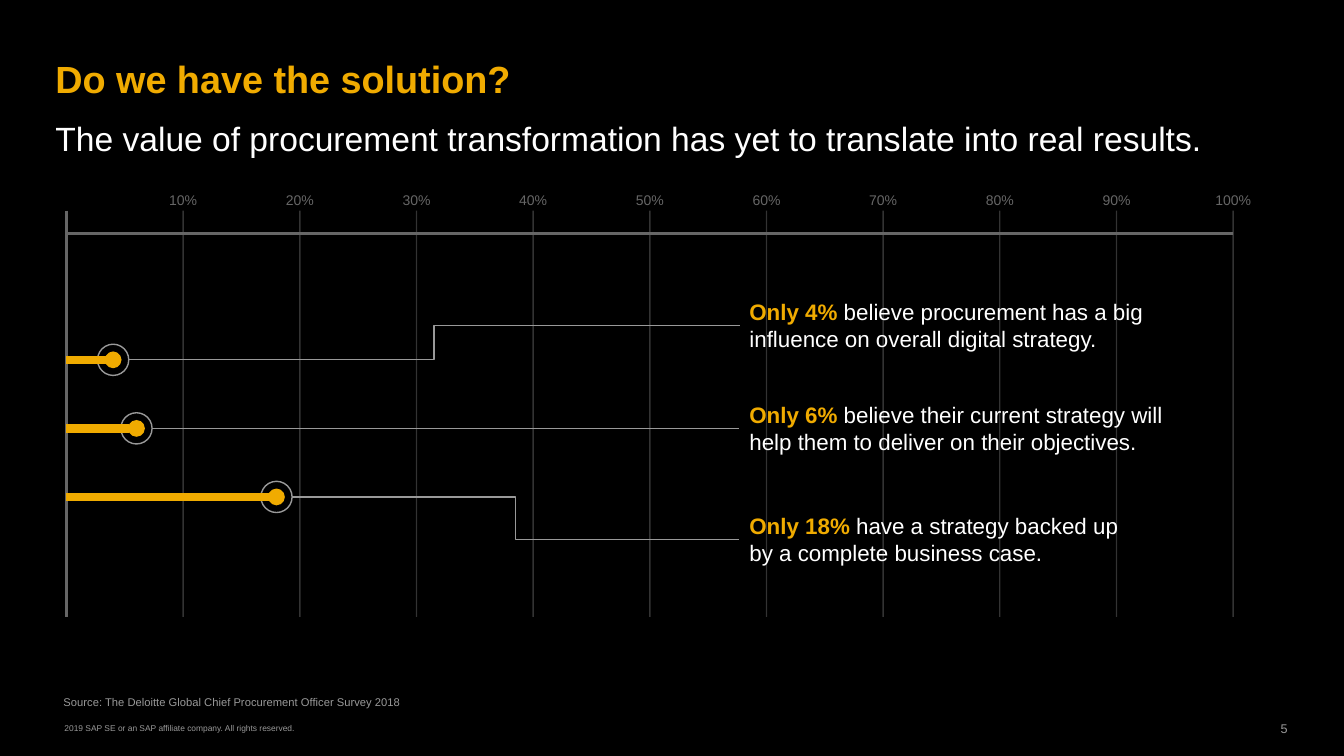
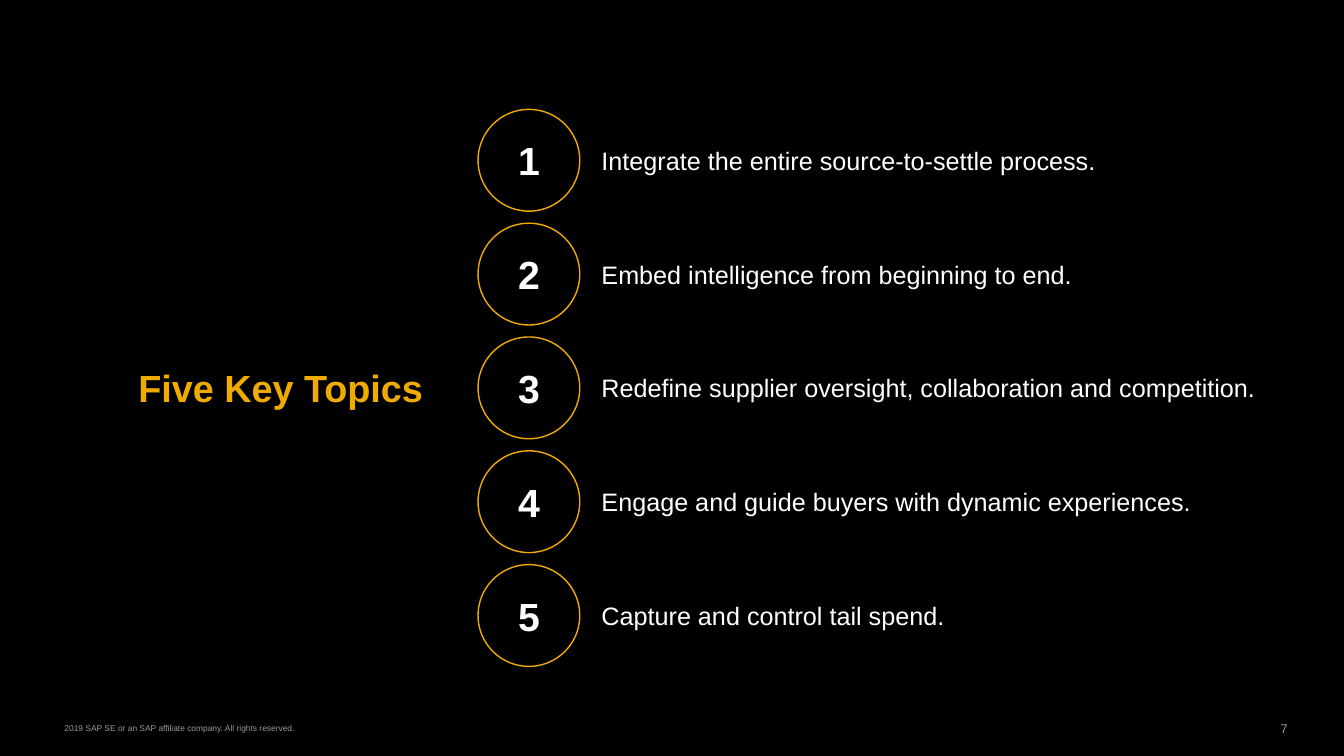
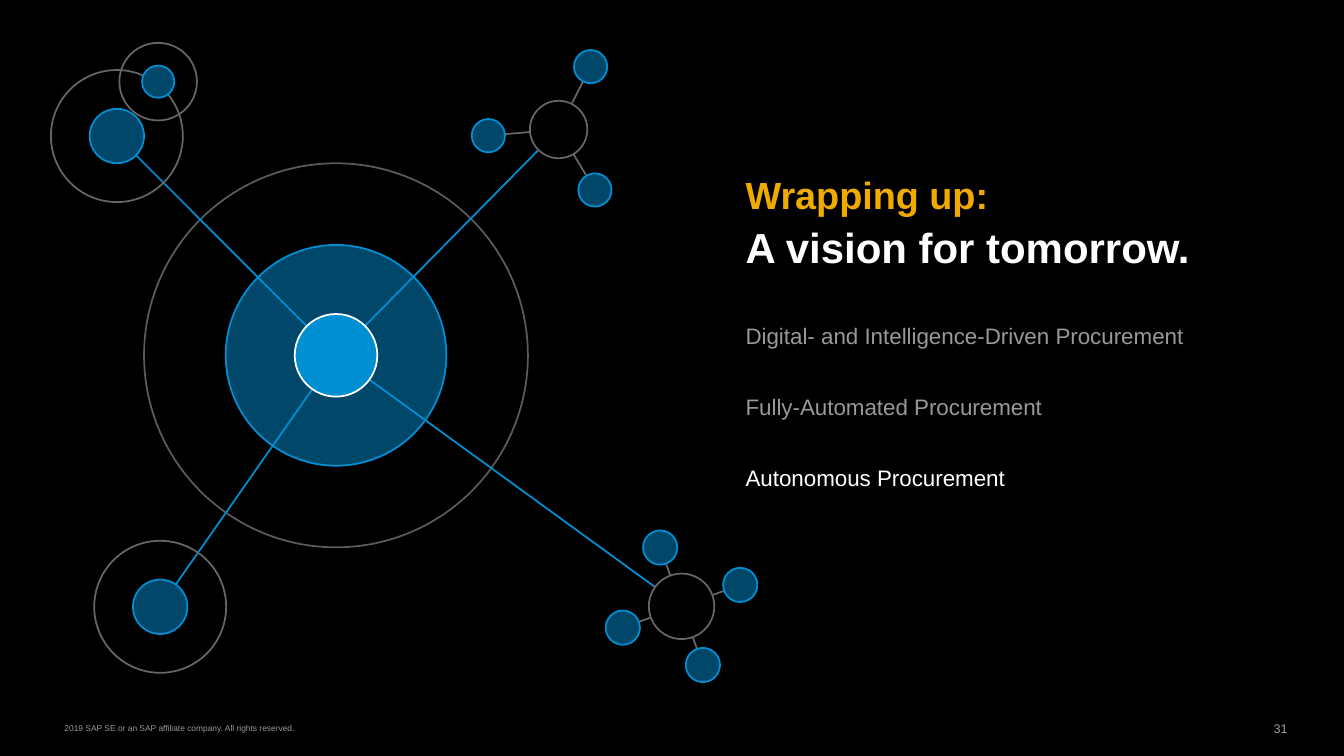
from dataclasses import dataclass
from math import cos, radians, sin

from lxml import etree
from pptx import Presentation
from pptx import util as u
from pptx.dml.color import RGBColor
from pptx.enum import shapes, text
from pptx.oxml import ns

# Lengths are counted in square grid cells, 75 rows to the slide height
COLUMNS, ROWS = 133.4, 75
CELL = u.Inches(0.1)
FONT = "Arial"
COLOURS = {
    "black": "000000",
    "white": "FFFFFF",
    "gold": "F0AB00",
    "light": "D9D9D9",
    "grey": "999999",
    "dark": "666666",
    "blue": "008FD3",
    "navy": "00476A",
}
LEFT, RIGHT = 5.5, 127.8
LEFT_ALIGN = text.PP_ALIGN.LEFT
CENTRE_ALIGN = text.PP_ALIGN.CENTER
RIGHT_ALIGN = text.PP_ALIGN.RIGHT
COPYRIGHT = "2019 SAP SE or an SAP affiliate company. All rights reserved."


@dataclass(frozen=True)
class Run:
    words: str
    size: float
    colour: str = "white"
    bold: bool = False


@dataclass(frozen=True)
class Point:
    x: float
    y: float


@dataclass(frozen=True)
class Finding:
    percent: int
    claim: str
    text_top: float
    text_width: float


@dataclass(frozen=True)
class Satellite:
    centre: Point
    dot: float
    ring: float


@dataclass(frozen=True)
class Molecule:
    centre: Point
    core: float
    atom: float
    reach: float
    angles: tuple[int, ...]


def grid(cells: float) -> u.Emu:
    return u.Emu(round(cells * CELL))


def rgb(name: str) -> RGBColor:
    return RGBColor.from_string(COLOURS[name])


# Drawing helpers
def write(paragraph, runs: list[Run], align=LEFT_ALIGN) -> None:
    paragraph.alignment = align
    for part in runs:
        run = paragraph.add_run()
        run.text = part.words
        run.font.name = FONT
        run.font.size = u.Pt(part.size)
        run.font.bold = part.bold
        run.font.color.rgb = rgb(part.colour)


def add_text(slide, left: float, top: float, width: float, height: float,
             runs: list[Run], align=LEFT_ALIGN, inset: float = 0):
    box = slide.shapes.add_textbox(grid(left), grid(top), grid(width), grid(height))
    frame = box.text_frame
    frame.word_wrap = True
    frame.margin_left = grid(inset)
    frame.margin_right = frame.margin_top = frame.margin_bottom = 0
    write(frame.paragraphs[0], runs, align)
    return box


def style_line(line, colour: str, points: float, opacity: int = 100) -> None:
    line.color.rgb = rgb(colour)
    line.width = u.Pt(points)
    if opacity < 100:
        colour_element = line.fill._xPr.find(".//" + ns.qn("a:srgbClr"))
        etree.SubElement(colour_element, ns.qn("a:alpha"), val=str(opacity * 1000))


def add_line(slide, start: Point, end: Point, colour: str, points: float,
             opacity: int = 100, dot_end: bool = False,
             kind=shapes.MSO_CONNECTOR.STRAIGHT):
    connector = slide.shapes.add_connector(
        kind, grid(start.x), grid(start.y), grid(end.x), grid(end.y))
    style_line(connector.line, colour, points, opacity)
    properties = connector._element.spPr
    if dot_end:
        outline = properties.find(ns.qn("a:ln"))
        etree.SubElement(outline, ns.qn("a:tailEnd"), type="oval", w="sm", len="sm")
    etree.SubElement(properties, ns.qn("a:effectLst"))
    return connector


def add_circle(slide, centre: Point, diameter: float, line: str,
               fill: str | None = None, points: float = 1.25, opacity: int = 100):
    shape = slide.shapes.add_shape(
        shapes.MSO_SHAPE.OVAL, grid(centre.x - diameter / 2),
        grid(centre.y - diameter / 2), grid(diameter), grid(diameter))
    shape.shadow.inherit = False
    if fill:
        shape.fill.solid()
        shape.fill.fore_color.rgb = rgb(fill)
    else:
        shape.fill.background()
    style_line(shape.line, line, points, opacity)
    return shape


def add_title(slide, words: str, left: float, top: float, width: float,
              align=LEFT_ALIGN) -> None:
    add_text(slide, left, top, width, 4.5, [Run(words, 27, "gold", True)], align)


def new_slide(presentation, number: int):
    slide = presentation.slides.add_slide(presentation.slide_layouts[6])
    add_text(slide, RIGHT - 1.5, 71.5, 1.5, 1.5, [Run(str(number), 9, "grey")], RIGHT_ALIGN)
    add_text(slide, LEFT, 71.7, 24.8, 1, [Run(COPYRIGHT, 6, "grey")], inset=0.9)
    return slide


# Survey results on a percentage scale
def build_survey(presentation) -> None:
    findings = [
        Finding(4, "believe procurement has a big influence on overall digital strategy.",
                29.6, 42.5),
        Finding(6, "believe their current strategy will help them to deliver on "
                   "their objectives.", 39.8, 44.4),
        Finding(18, "have a strategy backed up by a complete business case.", 50.8, 38.2),
    ]
    axis_x, axis_width = 6.6, 115.8
    axis_top, axis_bottom, rule_y = 20.9, 61.2, 23.2
    first_bar, bar_pitch, ring = 35.7, 6.8, 3.1
    text_left, text_height = 73.4, 5.4

    def scale(percent: float) -> float:
        return axis_x + axis_width * percent / 100

    slide = new_slide(presentation, 5)
    for percent in range(10, 101, 10):
        x = scale(percent)
        add_line(slide, Point(x, axis_top), Point(x, axis_bottom), "dark", 1, 50)
        add_text(slide, x - 2.2, 19, 4.4, 1.7, [Run(f"{percent}%", 10, "dark")], CENTRE_ALIGN)
    add_line(slide, Point(axis_x, axis_top), Point(axis_x, axis_bottom), "dark", 2)
    add_line(slide, Point(axis_x, rule_y), Point(scale(100), rule_y), "dark", 2)

    add_title(slide, "Do we have the solution?", LEFT, 5.5, RIGHT - LEFT)
    add_text(slide, LEFT, 11.7, 114.9, 4, [Run(
        "The value of procurement transformation has yet to translate into real results.", 24)])

    for row, finding in enumerate(findings):
        label = add_text(
            slide, text_left, finding.text_top, finding.text_width, text_height,
            [Run(f"Only {finding.percent}% ", 16, "gold", True), Run(finding.claim, 16)],
            inset=1)
        value = Point(scale(finding.percent), first_bar + row * bar_pitch)
        label_middle = Point(text_left, finding.text_top + text_height / 2)
        level = abs(label_middle.y - value.y) < 0.1
        kind = shapes.MSO_CONNECTOR.STRAIGHT if level else shapes.MSO_CONNECTOR.ELBOW
        add_circle(slide, value, ring, "grey", points=1)
        add_line(slide, Point(axis_x, value.y), value, "gold", 6, dot_end=True)
        leader = add_line(slide, Point(value.x + ring / 2, value.y), label_middle,
                          "grey", 1, kind=kind)
        leader.end_connect(label, 1)

    add_text(slide, 6.3, 69, 33.9, 1.3, [Run(
        "Source: The Deloitte Global Chief Procurement Officer Survey 2018", 8, "grey")])


# Numbered list of topics
def build_topics(presentation) -> None:
    topics = [
        "Integrate the entire source-to-settle process.",
        "Embed intelligence from beginning to end.",
        "Redefine supplier oversight, collaboration and competition.",
        "Engage and guide buyers with dynamic experiences.",
        "Capture and control tail spend.",
    ]
    slide = new_slide(presentation, 7)
    add_title(slide, "Five Key Topics", LEFT, 36.2, 36.5, RIGHT_ALIGN)
    for row, topic in enumerate(topics):
        middle = 15.9 + row * 11.29
        add_text(slide, 59.7, middle - 1.5, 72.5, 3, [Run(topic, 18)])
        badge = add_circle(slide, Point(52.5, middle), 10.1, "gold", "black", 1)
        badge.text_frame.vertical_anchor = text.MSO_ANCHOR.MIDDLE
        write(badge.text_frame.paragraphs[0],
              [Run(str(row + 1), 28, bold=True)], CENTRE_ALIGN)


# Closing network diagram
def add_molecule(slide, molecule: Molecule) -> None:
    centre = molecule.centre
    atoms = [Point(centre.x + molecule.reach * cos(radians(angle)),
                   centre.y + molecule.reach * sin(radians(angle)))
             for angle in molecule.angles]
    for atom in atoms:
        add_line(slide, centre, atom, "dark", 1.25)
    add_circle(slide, centre, molecule.core, "dark", "black")
    for atom in atoms:
        add_circle(slide, atom, molecule.atom, "blue", "navy")


def build_closing(presentation) -> None:
    hub = Point(33.35, 35.25)
    satellites = [
        Satellite(Point(15.9, 60.2), 5.4, 13.1),
        Satellite(Point(11.6, 13.5), 5.4, 13.1),
        Satellite(Point(15.7, 8.1), 3.2, 7.7),
    ]
    molecules = [
        Molecule(Point(67.65, 60.15), 6.5, 3.4, 6.2, (-20, 70, 160, 250)),
        Molecule(Point(55.45, 12.85), 5.7, 3.3, 7, (-63, 59, 175)),
    ]
    steps = [
        ("Digital- and Intelligence-Driven Procurement", "grey"),
        ("Fully-Automated Procurement", "grey"),
        ("Autonomous Procurement", "white"),
    ]
    text_left = 74

    slide = new_slide(presentation, 31)
    add_circle(slide, hub, 38.1, "light", opacity=42)
    add_circle(slide, hub, 21.9, "blue", "navy")

    add_title(slide, "Wrapping up:", text_left, 17, 32.8)
    add_text(slide, text_left, 22, 53.1, 5, [Run("A vision for tomorrow.", 30, bold=True)])
    for row, (step, colour) in enumerate(steps):
        add_text(slide, text_left, 32 + 7 * row, 44.1, 2.7, [Run(step, 16, colour)])

    for target in [satellites[0], satellites[1], *molecules]:
        add_line(slide, hub, target.centre, "blue", 1.25)
    for satellite in satellites:
        add_circle(slide, satellite.centre, satellite.dot, "blue", "navy")
        add_circle(slide, satellite.centre, satellite.ring, "dark")
    for molecule in molecules:
        add_molecule(slide, molecule)
    add_circle(slide, hub, 8.2, "white", "blue")


def main() -> None:
    presentation = Presentation()
    presentation.slide_width = grid(COLUMNS)
    presentation.slide_height = grid(ROWS)
    background = presentation.slide_master.background.fill
    background.solid()
    background.fore_color.rgb = rgb("black")
    for build in (build_survey, build_topics, build_closing):
        build(presentation)
    presentation.save("out.pptx")


if __name__ == "__main__":
    main()
